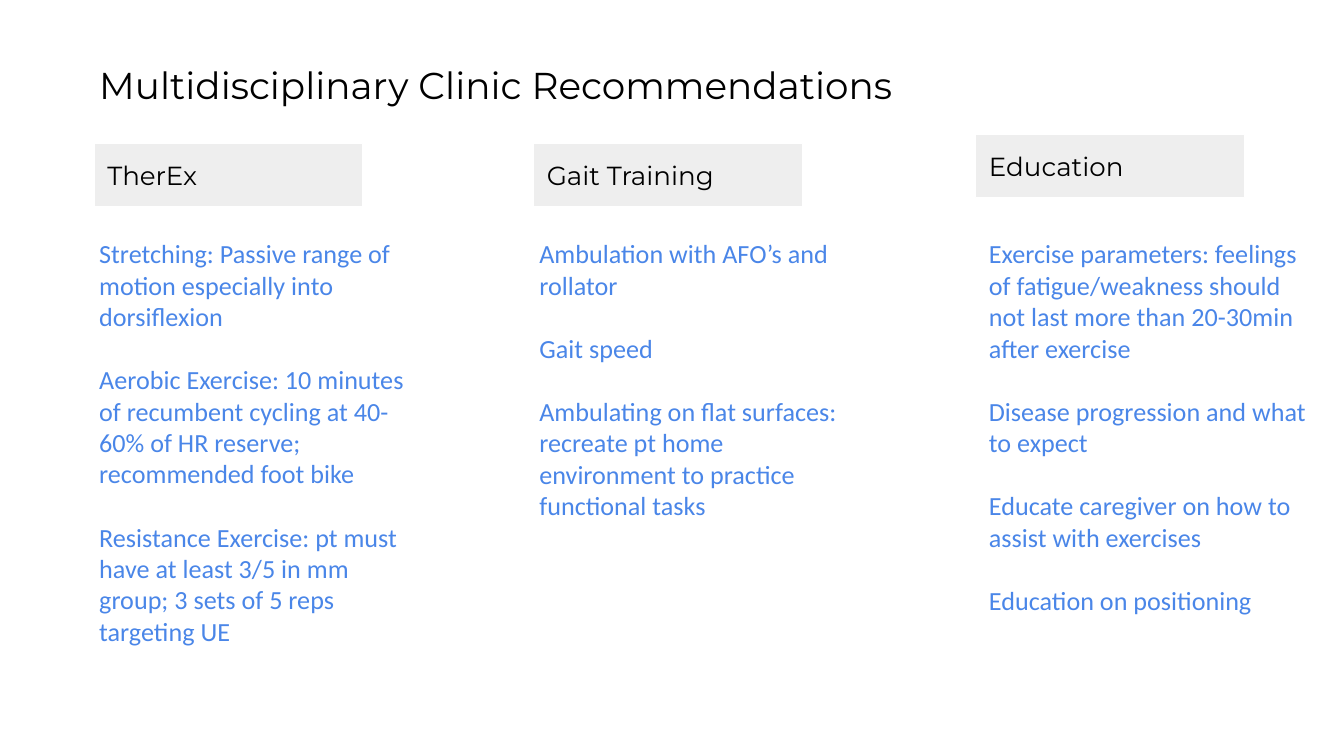
from pptx import Presentation
from pptx.dml.color import RGBColor
from pptx.enum.shapes import MSO_SHAPE
from pptx.enum.text import MSO_ANCHOR, MSO_AUTO_SIZE, PP_ALIGN
from pptx.util import Pt

PX = 4572
RECTANGLE = MSO_SHAPE.RECTANGLE
TOP = MSO_ANCHOR.TOP
MIDDLE = MSO_ANCHOR.MIDDLE
GROW = MSO_AUTO_SIZE.SHAPE_TO_FIT_TEXT
LEFT = PP_ALIGN.LEFT
BLACK, WHITE, GRAY, BLUE = "000000", "FFFFFF", "EEEEEE", "4A86E8"
HEADING_FONT, BODY_FONT = "Montserrat", "Calibri"


def color(value):
    return RGBColor.from_string(value)


def add_text(*paragraphs, box, size=14, font=BODY_FONT, text_color=BLUE,
             fill=None, anchor=TOP, gap=0):
    bounds = [length * PX for length in box]
    if fill:
        shape = slide.shapes.add_shape(RECTANGLE, *bounds)
        shape.shadow.inherit = False
        shape.fill.solid()
        shape.fill.fore_color.rgb = color(fill)
        shape.line.color.rgb = color(WHITE)
        shape.line.width = Pt(0.75)
    else:
        shape = slide.shapes.add_textbox(*bounds)
        shape.text_frame.auto_size = GROW
    frame = shape.text_frame
    frame.word_wrap = True
    frame.vertical_anchor = anchor
    frame.margin_left = frame.margin_right = 20 * PX
    frame.margin_top = frame.margin_bottom = 20 * PX
    for index, text in enumerate(paragraphs):
        paragraph = frame.add_paragraph() if index else frame.paragraphs[0]
        paragraph.alignment = LEFT
        if index:
            paragraph.space_before = Pt(gap)
        run = paragraph.add_run()
        run.text = text
        run.font.size = Pt(size)
        run.font.name = font
        run.font.color.rgb = color(text_color)


presentation = Presentation()
presentation.slide_width = 2000 * PX
presentation.slide_height = 1125 * PX
slide = presentation.slides.add_slide(presentation.slide_layouts[6])

columns = [
    ("TherEx", (140, 214), (128, 334, 514, 700), [
        "Stretching: Passive range of motion especially into dorsiflexion",
        "Aerobic Exercise: 10 minutes of recumbent cycling at 40-60% of HR reserve; "
        "recommended foot bike",
        "Resistance Exercise: pt must have at least 3/5 in mm group; "
        "3 sets of 5 reps targeting UE",
    ]),
    ("Gait Training", (794, 214), (783, 334, 488, 606), [
        "Ambulation with AFO’s and rollator",
        "Gait speed",
        "Ambulating on flat surfaces: recreate pt home environment "
        "to practice functional tasks",
    ]),
    ("Education", (1452, 200), (1452, 334, 514, 748), [
        "Exercise parameters: feelings of fatigue/weakness should not last "
        "more than 20-30min after exercise",
        "Disease progression and what to expect",
        "Educate caregiver on how to assist with exercises",
        "Education on positioning",
    ]),
]

for heading, corner, body_box, recommendations in columns:
    add_text(heading, box=(*corner, 400, 94), font=HEADING_FONT,
             text_color=BLACK, fill=GRAY, anchor=MIDDLE)
    add_text(*recommendations, box=body_box, gap=17)

add_text("Multidisciplinary Clinic Recommendations", box=(128, 72, 1420, 108),
         size=20, font=HEADING_FONT, text_color=BLACK)

presentation.save("out.pptx")
